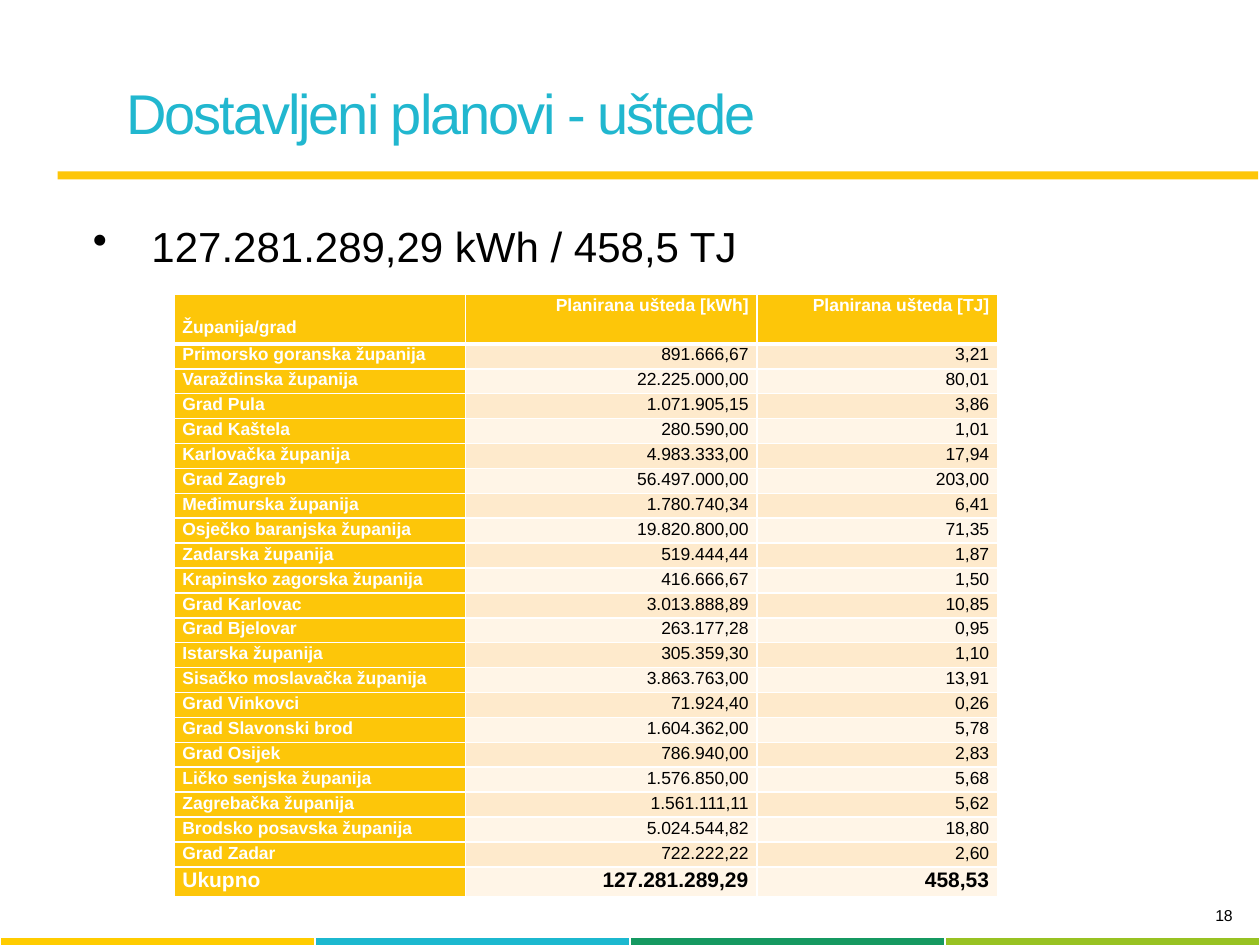
from lxml import etree
from pptx import Presentation
from pptx.dml.color import RGBColor
from pptx.enum.shapes import MSO_SHAPE
from pptx.enum.text import MSO_ANCHOR, PP_ALIGN
from pptx.oxml.ns import qn
from pptx.util import Pt

RECTANGLE = MSO_SHAPE.RECTANGLE
TOP, MIDDLE, BOTTOM = MSO_ANCHOR.TOP, MSO_ANCHOR.MIDDLE, MSO_ANCHOR.BOTTOM
LEFT, RIGHT = PP_ALIGN.LEFT, PP_ALIGN.RIGHT

FONT = "Arial"
BLACK = RGBColor(0x00, 0x00, 0x00)
WHITE = RGBColor(0xFF, 0xFF, 0xFF)
TITLE_BLUE = RGBColor(0x21, 0xB7, 0xCF)
YELLOW = RGBColor(0xFD, 0xC6, 0x09)
DARK_BAND = RGBColor(0xFE, 0xEA, 0xCC)
LIGHT_BAND = RGBColor(0xFF, 0xF5, 0xE7)
STRIPE_COLOURS = [
    RGBColor(0xFF, 0xCC, 0x00),
    RGBColor(0x1C, 0xB8, 0xCF),
    RGBColor(0x15, 0x99, 0x61),
    RGBColor(0x98, 0xC2, 0x22),
]

HEADER_HEIGHT, ROW_HEIGHT, TOTAL_HEIGHT = 28.5, 14.25, 17.25
COLUMN_WIDTHS = [166.5, 166.5, 137.5]
SAVINGS = [
    ("Županija/grad", "Planirana ušteda [kWh]", "Planirana ušteda [TJ]"),
    ("Primorsko goranska županija", "891.666,67", "3,21"),
    ("Varaždinska županija", "22.225.000,00", "80,01"),
    ("Grad Pula", "1.071.905,15", "3,86"),
    ("Grad Kaštela", "280.590,00", "1,01"),
    ("Karlovačka županija", "4.983.333,00", "17,94"),
    ("Grad Zagreb", "56.497.000,00", "203,00"),
    ("Međimurska županija", "1.780.740,34", "6,41"),
    ("Osječko baranjska županija", "19.820.800,00", "71,35"),
    ("Zadarska županija", "519.444,44", "1,87"),
    ("Krapinsko zagorska županija", "416.666,67", "1,50"),
    ("Grad Karlovac", "3.013.888,89", "10,85"),
    ("Grad Bjelovar", "263.177,28", "0,95"),
    ("Istarska županija", "305.359,30", "1,10"),
    ("Sisačko moslavačka županija", "3.863.763,00", "13,91"),
    ("Grad Vinkovci", "71.924,40", "0,26"),
    ("Grad Slavonski brod", "1.604.362,00", "5,78"),
    ("Grad Osijek", "786.940,00", "2,83"),
    ("Ličko senjska županija", "1.576.850,00", "5,68"),
    ("Zagrebačka županija", "1.561.111,11", "5,62"),
    ("Brodsko posavska županija", "5.024.544,82", "18,80"),
    ("Grad Zadar", "722.222,22", "2,60"),
    ("Ukupno", "127.281.289,29", "458,53"),
]


def style_paragraph(paragraph, size, colour, alignment=LEFT, bold=False):
    paragraph.alignment = alignment
    font = paragraph.font
    font.name, font.size, font.bold = FONT, Pt(size), bold
    font.color.rgb = colour


def add_text(slide, text, box, size, colour, anchor=MIDDLE, alignment=LEFT):
    shape = slide.shapes.add_textbox(*map(Pt, box))
    frame = shape.text_frame
    frame.word_wrap = True
    frame.vertical_anchor = anchor
    paragraph = frame.paragraphs[0]
    paragraph.text = text
    style_paragraph(paragraph, size, colour, alignment)
    return paragraph


def add_title(slide, text):
    paragraph = add_text(slide, text, (65, 41, 636, 46), 32, TITLE_BLUE)
    # Tightened letter spacing, in hundredths of a point
    paragraph.runs[0].font._element.set("spc", "-120")


def add_bullet_text(slide, text):
    paragraph = add_text(slide, text, (46, 122.5, 642, 36), 24, BLACK)
    properties = paragraph._p.get_or_add_pPr()
    properties.set("marL", str(Pt(33.5)))
    properties.set("indent", str(-Pt(33.5)))
    bullet = etree.Element(qn("a:buChar"), char="•")
    properties.insert(0, bullet)


def add_rule(slide):
    shape = slide.shapes.add_shape(RECTANGLE, Pt(33), Pt(98), Pt(686), Pt(4.5))
    shape.shadow.inherit = False
    shape.fill.solid()
    shape.fill.fore_color.rgb = YELLOW
    shape.line.fill.background()


def fill_cell(cell, colour):
    cell.fill.solid()
    cell.fill.fore_color.rgb = colour


def set_borders(cell, bottom_width):
    """Draw white cell borders; they must come before the fill in the XML."""
    properties = cell._tc.get_or_add_tcPr()
    widths = {"a:lnL": 1, "a:lnR": 1, "a:lnT": 1, "a:lnB": bottom_width}
    for position, (tag, width) in enumerate(widths.items()):
        line = etree.Element(qn(tag), w=str(Pt(width)))
        fill = etree.SubElement(line, qn("a:solidFill"))
        etree.SubElement(fill, qn("a:srgbClr"), val=str(WHITE))
        properties.insert(position, line)


def add_footer_stripe(slide):
    columns = len(STRIPE_COLOURS)
    table = slide.shapes.add_table(
        1, columns, Pt(0), Pt(535.7), Pt(720), Pt(12)).table
    for cell, colour in zip(table.rows[0].cells, STRIPE_COLOURS):
        fill_cell(cell, colour)


def add_savings_table(slide):
    last = len(SAVINGS) - 1
    heights = [HEADER_HEIGHT] + [ROW_HEIGHT] * (last - 1) + [TOTAL_HEIGHT]
    table = slide.shapes.add_table(
        len(SAVINGS), len(COLUMN_WIDTHS), Pt(99.5), Pt(168),
        Pt(sum(COLUMN_WIDTHS)), Pt(sum(heights))).table
    for column, width in zip(table.columns, COLUMN_WIDTHS):
        column.width = Pt(width)

    for row_index, values in enumerate(SAVINGS):
        table.rows[row_index].height = Pt(heights[row_index])
        is_header, is_total = row_index == 0, row_index == last
        band = DARK_BAND if row_index % 2 else LIGHT_BAND
        for column_index, value in enumerate(values):
            is_label = column_index == 0
            highlighted = is_header or is_label
            cell = table.cell(row_index, column_index)
            cell.margin_left = cell.margin_right = Pt(4.75)
            cell.margin_top = cell.margin_bottom = Pt(0)
            cell.vertical_anchor = TOP
            if is_header and is_label:
                cell.vertical_anchor = BOTTOM
                cell.margin_bottom = Pt(4)
            fill_cell(cell, YELLOW if highlighted else band)
            set_borders(cell, 3 if is_header else 1)
            paragraph = cell.text_frame.paragraphs[0]
            paragraph.text = value
            paragraph.line_spacing = 1.07
            style_paragraph(
                paragraph, 12 if is_total else 10,
                WHITE if highlighted else BLACK,
                LEFT if is_label else RIGHT, highlighted or is_total)


def main():
    presentation = Presentation()
    presentation.slide_width, presentation.slide_height = Pt(720), Pt(540)
    slide = presentation.slides.add_slide(presentation.slide_layouts[6])
    add_footer_stripe(slide)
    add_text(slide, "18", (569.5, 514, 142, 22), 9, BLACK, TOP, RIGHT)
    add_title(slide, "Dostavljeni planovi - uštede")
    add_rule(slide)
    add_bullet_text(slide, "127.281.289,29 kWh / 458,5 TJ")
    add_savings_table(slide)
    presentation.save("out.pptx")


if __name__ == "__main__":
    main()
